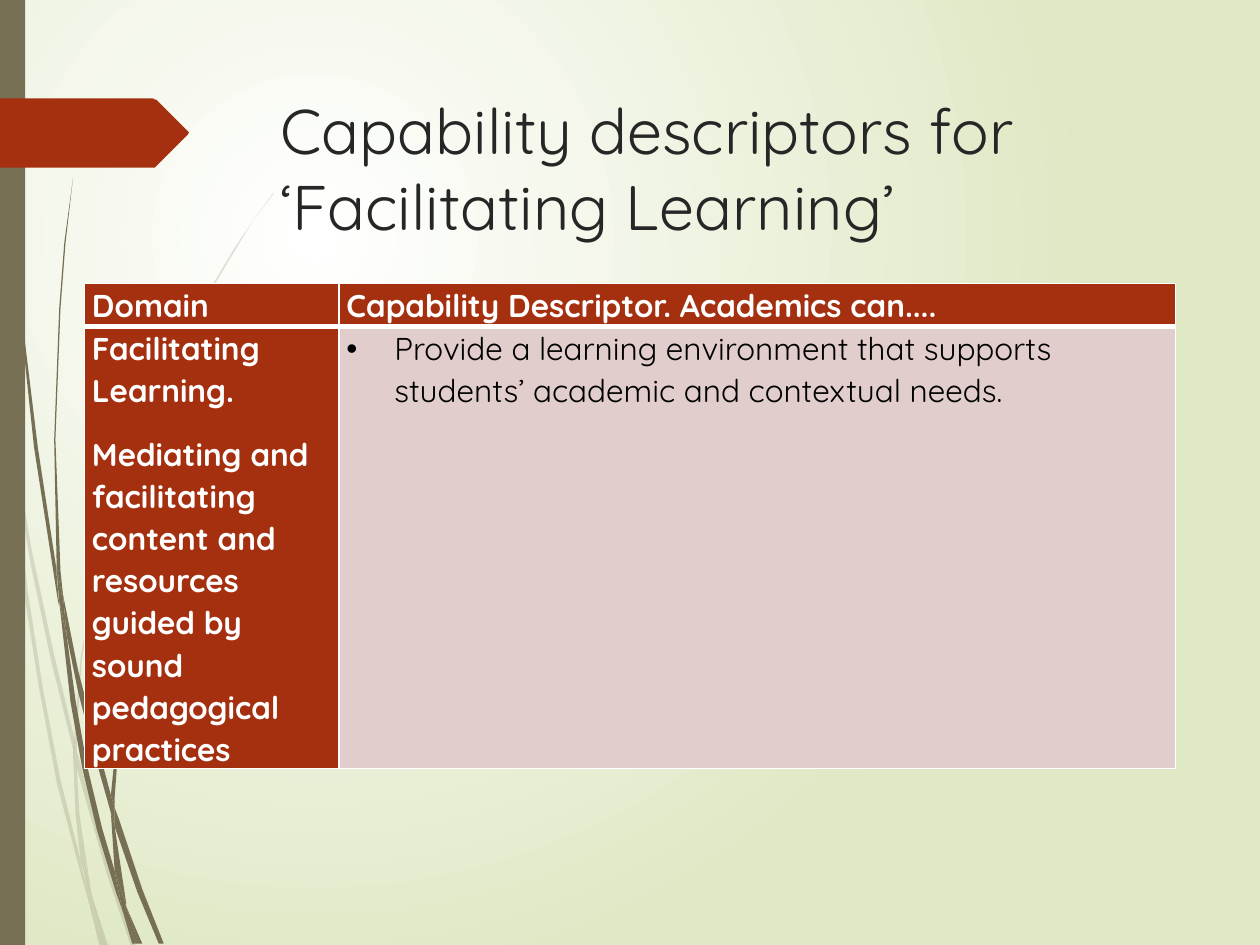
from lxml import etree
from pptx import Presentation
from pptx.dml.color import RGBColor
from pptx.enum.text import MSO_ANCHOR
from pptx.enum.shapes import MSO_SHAPE
from pptx.oxml.ns import qn
from pptx.util import Inches, Pt

RECT = MSO_SHAPE.RECTANGLE
TOP = MSO_ANCHOR.TOP
WHITE = RGBColor(0xFF, 0xFF, 0xFF)
BLACK = RGBColor(0, 0, 0)
DARK = RGBColor(0x26, 0x26, 0x26)
OLIVE = RGBColor(0x76, 0x6F, 0x54)
RUST = RGBColor(0xA5, 0x30, 0x10)
PINK = RGBColor(0xE1, 0xCD, 0xCC)
LIME = RGBColor(0xDF, 0xE8, 0xC4)

PALE_WISPS = [
    [(0.08, 3.5), (0.06, 3.22), (0, 2.82), (0, 2.99), (0.07, 3.44)],
    [(0.4, 5.22), (0.59, 5.99), (0.59, 5.86), (0.43, 5.2), (0.25, 4.36), (0.1, 3.45),
     (0.12, 3.76), (0.25, 4.51)],
    [(0.64, 6.07), (0.61, 5.96), (0.61, 6.1), (0.85, 6.94), (1.04, 7.51), (1.08, 7.51),
     (0.88, 6.92)],
    [(0.83, 7.51), (0.86, 7.51), (0.73, 7.11)],
    [(0.64, 6.83), (0.48, 6.19), (0.34, 5.46), (0.22, 4.69), (0.12, 3.76), (0.08, 3.5),
     (0.19, 4.7), (0.31, 5.46), (0.45, 6.21), (0.64, 6.93), (0.7, 7.14), (0.69, 7.07)],
    [(0.58, 5.99), (0.6, 6.46), (0.64, 6.83), (0.67, 6.92), (0.73, 7.11), (0.72, 7.06),
     (0.63, 6.46), (0.61, 6.1), (0.61, 6.08)],
    [(0.61, 5.84), (0.65, 5.22), (0.76, 4.62), (0.92, 4.05), (1.11, 3.49), (1.34, 2.95),
     (1.59, 2.45), (1.87, 1.98), (2.01, 1.75), (2.17, 1.54), (2.17, 1.53), (2.01, 1.75),
     (1.86, 1.97), (1.58, 2.44), (1.33, 2.94), (1.1, 3.48), (0.91, 4.04), (0.75, 4.61),
     (0.64, 5.22), (0.59, 5.84), (0.59, 5.86), (0.61, 5.96)],
    [(0.7, 7.14), (0.79, 7.51), (0.82, 7.51)],
    [(0.61, 6.08), (0.61, 6.1), (0.61, 5.96), (0.59, 5.86), (0.58, 5.99)],
    [(0.67, 6.92), (0.65, 6.83), (0.69, 7.07), (0.7, 7.14), (0.82, 7.51), (0.83, 7.51),
     (0.73, 7.11)],
]
DARK_WISPS = [
    [(0.05, 1.1), (0.14, 2.33), (0.27, 3.55), (0.46, 4.77), (0.47, 4.81), (0.45, 4.57),
     (0.45, 4.53), (0.3, 3.55), (0.15, 2.32), (0.06, 1.09), (0.04, 0.48), (0.03, 0),
     (0.02, 0), (0.03, 0.48)],
    [(0.73, 5.92), (0.88, 6.45), (0.88, 6.33), (0.88, 6.31), (0.77, 5.9), (0.62, 5.32),
     (0.5, 4.72), (0.53, 5.05), (0.62, 5.49)],
    [(0.94, 6.49), (0.91, 6.41), (0.91, 6.56), (1.09, 7.08), (1.26, 7.49), (1.3, 7.49),
     (1.13, 7.06)],
    [(0.91, 6.91), (0.81, 6.57), (0.69, 6.07), (0.6, 5.56), (0.53, 5.05), (0.47, 4.77),
     (0.56, 5.57), (0.65, 6.08), (0.77, 6.59), (0.92, 7.08), (0.97, 7.22), (0.96, 7.17)],
    [(0.5, 4.72), (0.48, 4.53), (0.44, 3.49), (0.48, 2.45), (0.52, 1.93), (0.58, 1.41),
     (0.51, 1.93), (0.47, 2.45), (0.43, 3.49), (0.45, 4.49), (0.49, 4.72)],
    [(1.1, 7.49), (1.13, 7.49), (1, 7.19)],
    [(0.47, 4.77), (0.53, 5.05), (0.5, 4.72), (0.49, 4.72), (0.45, 4.49), (0.45, 4.53)],
    [(0.91, 6.33), (0.94, 5.92), (1.03, 5.52), (1.16, 5.13), (1.31, 4.76), (1.49, 4.4),
     (1.69, 4.06), (1.91, 3.74), (2.03, 3.59), (2.16, 3.44), (2.15, 3.44), (2.03, 3.58),
     (1.91, 3.73), (1.68, 4.05), (1.48, 4.39), (1.29, 4.74), (1.14, 5.12), (1.01, 5.51),
     (0.92, 5.91), (0.88, 6.31), (0.91, 6.41)],
    [(0.97, 7.22), (1.05, 7.49), (1.08, 7.49)],
    [(0.88, 6.45), (0.91, 6.91), (0.96, 7.06), (1, 7.19), (1, 7.16), (0.91, 6.56),
     (0.9, 6.51)],
    [(0.88, 6.45), (0.9, 6.51), (0.91, 6.56), (0.91, 6.41), (0.88, 6.31), (0.88, 6.33)],
    [(0.96, 7.06), (0.91, 6.91), (0.96, 7.17), (0.97, 7.22), (1.08, 7.49), (1.1, 7.49),
     (1, 7.19)],
]
ARROW = [(1.49, 1.07), (1.24, 1.32), (1.23, 1.33), (1.21, 1.33), (0, 1.33), (0, 0.78),
         (1.21, 0.78), (1.23, 0.79), (1.24, 0.79), (1.49, 1.04), (1.5, 1.05)]


def add_text(p, text, size=18, color=WHITE, bold=True, line=1.07, before=0, after=6):
    p.line_spacing = line
    p.space_before = Pt(before)
    p.space_after = Pt(after)
    r = p.add_run()
    r.text = text
    r.font.name = "Quicksand"
    r.font.size = Pt(size)
    r.font.bold = bold
    r.font.color.rgb = color


def add_outline(points, color, alpha=100):
    pts = [(Inches(x), Inches(y)) for x, y in points]
    builder = slide.shapes.build_freeform(*pts[0], scale=1.0)
    builder.add_line_segments(pts[1:], close=True)
    sp = builder.convert_to_shape()
    sp.shadow.inherit = False
    sp.fill.solid()
    sp.fill.fore_color.rgb = color
    sp.line.fill.background()
    if alpha < 100:
        clr = next(sp.element.spPr.iter(qn("a:srgbClr")))
        etree.SubElement(clr, qn("a:alpha"), val=str(alpha * 1000))


prs = Presentation()
prs.slide_width = Inches(10)
prs.slide_height = Inches(7.5)
slide = prs.slides.add_slide(prs.slide_layouts[6])

bg = slide.background.fill
bg.gradient()
for stop, position, color in zip(bg.gradient_stops, (0, 1), (WHITE, LIME)):
    stop.position = position
    stop.color.rgb = color
grad = next(slide.element.iter(qn("a:gradFill")))
lin = grad.find(qn("a:lin"))
radial = etree.Element(qn("a:path"), path="circle")
etree.SubElement(radial, qn("a:fillToRect"), l="50000", t="50000", r="100000", b="100000")
grad.replace(lin, radial)

for wisp in PALE_WISPS:
    add_outline(wisp, OLIVE, alpha=20)
for wisp in DARK_WISPS:
    add_outline(wisp, OLIVE)

band = slide.shapes.add_shape(RECT, 0, 0, Inches(0.2), Inches(7.5))
band.shadow.inherit = False
band.fill.solid()
band.fill.fore_color.rgb = OLIVE
band.line.fill.background()
add_outline(ARROW, RUST)

title = slide.shapes.add_textbox(Inches(2.13), Inches(0.68), Inches(7.21), Inches(1.4))
tf = title.text_frame
tf.word_wrap = True
tf.vertical_anchor = TOP
add_text(tf.paragraphs[0], "Capability descriptors for ‘Facilitating Learning’",
         size=36, color=DARK, bold=False, line=1.0, after=0)

table = slide.shapes.add_table(2, 2, Inches(0.67), Inches(2.25), Inches(8.66), Inches(3.85)).table
for col, width in zip(table.columns, (2.02, 6.64)):
    col.width = Inches(width)
for row, height in zip(table.rows, (0.34, 3.51)):
    row.height = Inches(height)

for i, row in enumerate(table.rows):
    for j, cell in enumerate(row.cells):
        cell.margin_left = cell.margin_right = Inches(0.06)
        cell.margin_top = cell.margin_bottom = 0
        cell.fill.solid()
        cell.fill.fore_color.rgb = PINK if i and j else RUST
        tcPr = cell._tc.get_or_add_tcPr()
        for n, side in enumerate("LRTB"):
            heavy = (i, side) in ((0, "B"), (1, "T"))
            ln = etree.Element(qn(f"a:ln{side}"), w=str(Pt(3 if heavy else 1)))
            fill = etree.SubElement(ln, qn("a:solidFill"))
            etree.SubElement(fill, qn("a:srgbClr"), val=str(WHITE))
            tcPr.insert(n, ln)

add_text(table.cell(0, 0).text_frame.paragraphs[0], "Domain")
add_text(table.cell(0, 1).text_frame.paragraphs[0], "Capability Descriptor. Academics can....")
tf = table.cell(1, 0).text_frame
add_text(tf.paragraphs[0], "Facilitating Learning.")
add_text(tf.add_paragraph(), "Mediating and facilitating content and resources guided by "
         "sound pedagogical practices", before=6)

p = table.cell(1, 1).text_frame.paragraphs[0]
pPr = p._p.get_or_add_pPr()
pPr.set("marL", str(Inches(0.38)))
pPr.set("indent", str(Inches(-0.38)))
etree.SubElement(pPr, qn("a:buFont"), typeface="Arial")
etree.SubElement(pPr, qn("a:buChar"), char="•")
add_text(p, "Provide a learning environment that supports students’ academic and "
         "contextual needs.", color=BLACK, bold=False, after=0)

prs.save("out.pptx")
